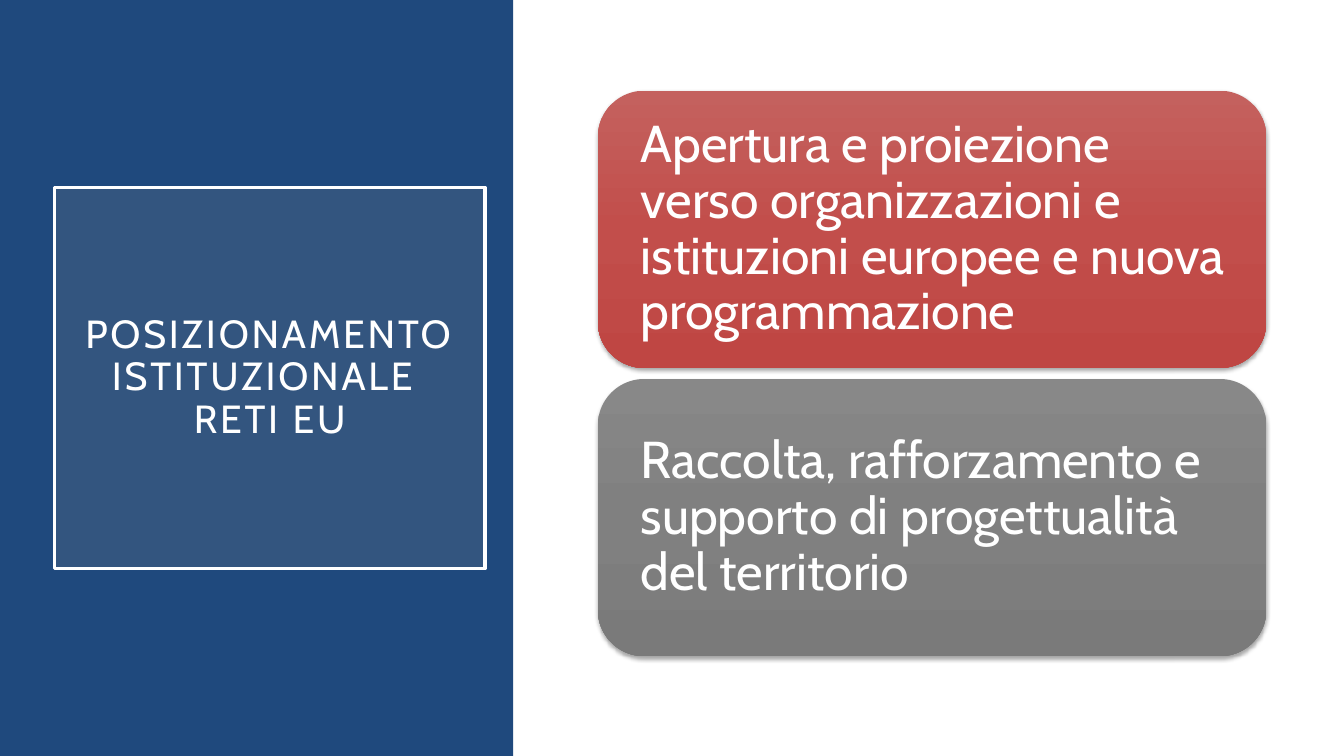
"""Build the slide on institutional positioning and EU networks."""
from dataclasses import dataclass

import lxml.etree
import pptx
import pptx.dml.color
import pptx.enum.shapes
import pptx.enum.text
import pptx.oxml.ns
import pptx.util

Inches = pptx.util.Inches
Pt = pptx.util.Pt
qn = pptx.oxml.ns.qn
SHAPES = pptx.enum.shapes.MSO_SHAPE
ALIGN = pptx.enum.text.PP_ALIGN

FONT = "Cabin"
WHITE = "FFFFFF"
NAVY = "1F497D"
SAND = "A7A08E"
CARD_TOP, CARD_HEIGHT, CARD_PITCH = 0.9, 2.75, 2.86


@dataclass(frozen=True)
class Card:
    text: str
    gradient: tuple[str, str, str]


CARDS = (
    Card(
        "Apertura e proiezione verso organizzazioni e istituzioni europee e nuova programmazione",
        ("C4615E", "C24E4B", "BF4643"),
    ),
    Card(
        "Raccolta, rafforzamento e supporto di progettualità del territorio",
        ("888888", "808080", "7A7A7A"),
    ),
)


def color(value: str) -> pptx.dml.color.RGBColor:
    """Turn a hex string into a colour."""
    return pptx.dml.color.RGBColor.from_string(value)


def add_block(page, kind, left: float, top: float, width: float, height: float):
    """Add a shape without shadow or outline."""
    block = page.shapes.add_shape(kind, Inches(left), Inches(top), Inches(width), Inches(height))
    block.shadow.inherit = False
    block.line.fill.background()
    return block


def fill_solid(block, value: str) -> None:
    """Fill a shape with one colour."""
    block.fill.solid()
    block.fill.fore_color.rgb = color(value)


def add_color(parent, value: str, opacity: int = 100) -> None:
    """Append a colour element with an opacity in percent."""
    node = lxml.etree.SubElement(parent, qn("a:srgbClr"), val=value)
    if opacity < 100:
        lxml.etree.SubElement(node, qn("a:alpha"), val=str(opacity * 1000))


def fill_gradient(block, values: tuple[str, ...]) -> None:
    """Fill a shape from top to bottom with evenly spaced colours."""
    block.fill.gradient()
    block.fill.gradient_angle = 270
    stops = block.element.spPr.find(".//" + qn("a:gsLst"))
    for stop in list(stops):
        stops.remove(stop)
    for index, value in enumerate(values):
        position = index * 100000 // (len(values) - 1)
        add_color(lxml.etree.SubElement(stops, qn("a:gs"), pos=str(position)), value)


def add_shadow(block) -> None:
    """Give a shape a soft shadow below it."""
    effects = block.element.spPr.find(qn("a:effectLst"))
    shadow = lxml.etree.SubElement(
        effects, qn("a:outerShdw"), blurRad=str(Pt(3.1)), dist=str(Pt(1.8)),
        dir="5400000", algn="ctr", rotWithShape="0",
    )
    add_color(shadow, "000000", 35)


def start_text(block, insets: tuple[float, float, float, float], align):
    """Set up the text frame and return its first paragraph."""
    frame = block.text_frame
    frame.word_wrap = True
    frame.vertical_anchor = pptx.enum.text.MSO_ANCHOR.MIDDLE
    frame.margin_left, frame.margin_top, frame.margin_right, frame.margin_bottom = map(Inches, insets)
    para = frame.paragraphs[0]
    para.alignment = align
    para.line_spacing = 0.9
    return para


def add_span(para, text: str, size: float):
    """Add a white run to a paragraph."""
    span = para.add_run()
    span.text = text
    span.font.name = FONT
    span.font.size = Pt(size)
    span.font.color.rgb = color(WHITE)
    return span


def add_title(page) -> None:
    """Draw the framed title on the side panel."""
    box = add_block(page, SHAPES.RECTANGLE, 0.54, 1.86, 4.27, 3.78)
    fill_solid(box, SAND)
    tint = box.element.spPr.find(qn("a:solidFill")).find(qn("a:srgbClr"))
    lxml.etree.SubElement(tint, qn("a:alpha"), val="15000")
    box.line.color.rgb = color(WHITE)
    box.line.width = Pt(2.5)
    para = start_text(box, (0.2, 0.2, 0.2, 0.2), ALIGN.CENTER)
    first = add_span(para, "POSIZIONAMENTO ISTITUZIONALE ", 28)
    para.add_line_break()
    second = add_span(para, "RETI EU", 28)
    for span in (first, second):
        span.font._element.set("spc", "200")


def add_card(page, card: Card, top: float) -> None:
    """Draw one rounded card with its statement."""
    box = add_block(page, SHAPES.ROUNDED_RECTANGLE, 5.93, top, 6.63, CARD_HEIGHT)
    box.adjustments[0] = 0.167
    fill_gradient(box, card.gradient)
    add_shadow(box)
    para = start_text(box, (0.29, 0.29, 0.15, 0.29), ALIGN.LEFT)
    para.space_after = Pt(12.9)
    add_span(para, card.text, 37)


def main() -> None:
    """Build and save the deck."""
    deck = pptx.Presentation()
    deck.slide_width, deck.slide_height = Inches(13.33), Inches(7.5)
    page = deck.slides.add_slide(deck.slide_layouts[6])
    panel = add_block(page, SHAPES.RECTANGLE, 0, 0, 5.09, 7.5)
    fill_solid(panel, NAVY)
    add_title(page)
    for index, card in enumerate(CARDS):
        add_card(page, card, CARD_TOP + index * CARD_PITCH)
    deck.save("out.pptx")


if __name__ == "__main__":
    main()
